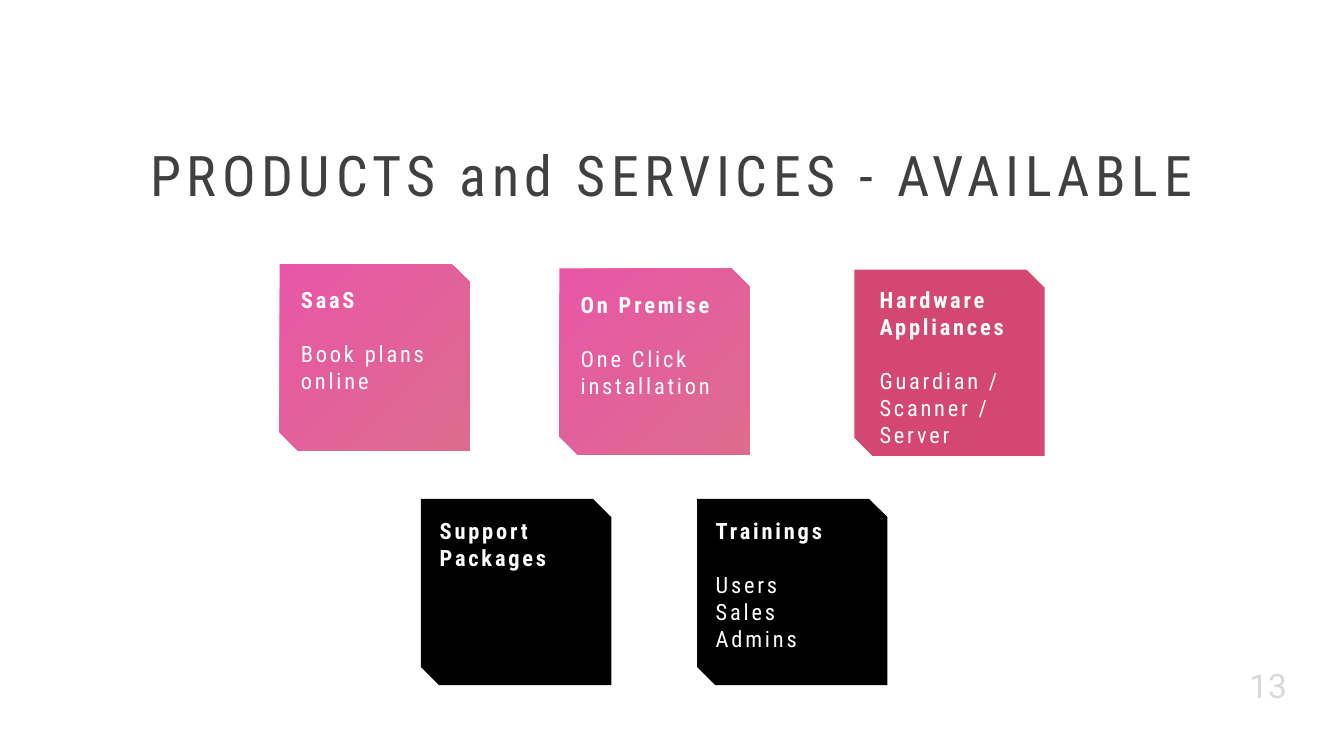
from dataclasses import dataclass
from typing import Optional

from lxml import etree
from pptx import Presentation
from pptx.dml.color import RGBColor
from pptx.enum import text as t
from pptx.oxml import ns
from pptx.util import Pt

WHITE = RGBColor(0xFF, 0xFF, 0xFF)
BLACK = RGBColor(0x00, 0x00, 0x00)
DARK_GREY = RGBColor(0x40, 0x40, 0x40)
LIGHT_GREY = RGBColor(0xD9, 0xD9, 0xD9)
PINK = RGBColor(0xE3, 0x2D, 0x91)
ROSE = RGBColor(0xD5, 0x47, 0x73)

CARD_W, CARD_H, SNIP = 204, 199.7, 19.6
LINE = 29  # height of one line of card text


@dataclass
class Card:
    left: float
    top: float
    inset_x: float
    inset_y: float
    text_w: float
    text_h: float
    heading: str
    lines: tuple[str, ...] = ()
    fill: Optional[RGBColor] = None  # None means the pink gradient


CARDS = [
    Card(299.5, 283, 15.8, 20.2, 183.6, 152.6, "SaaS", ("Book plans online",)),
    Card(599.3, 287.5, 15.8, 20.5, 227.5, 152.6, "On Premise", ("One Click installation",)),
    Card(451, 534.5, 13, 16.3, 203.8, 65.5, "Support Packages", fill=BLACK),
    Card(746.8, 534.5, 13, 16.3, 203.8, 152.6, "Trainings",
         ("Users", "Sales", "Admins"), BLACK),
    Card(915.3, 288.8, 20, 14.3, 203.8, 211, "Hardware Appliances",
         ("Guardian / Scanner / Server",), ROSE),
]


def write(p, text: str, *, size: float, color: RGBColor, font: str = "Roboto Condensed",
          bold: bool = False, spacing: float = 0, align=t.PP_ALIGN.LEFT, before: float = 0) -> None:
    p.alignment = align
    p.space_before = Pt(before)
    r = p.add_run()
    r.text = text
    r.font.name = font
    r.font.size = Pt(size)
    r.font.bold = bold
    r.font.color.rgb = color
    if spacing:
        r._r.get_or_add_rPr().set("spc", str(int(spacing * 100)))


def add_text_frame(s, left: float, top: float, width: float, height: float):
    tf = s.shapes.add_textbox(Pt(left), Pt(top), Pt(width), Pt(height)).text_frame
    tf.word_wrap = True
    return tf


def fill_gradient(sp) -> None:
    """Fill with pink to rose, top left to bottom right, at 80 % opacity."""
    sp.fill.gradient()
    sp.fill.gradient_angle = 315
    for stop, color, position in zip(sp.fill.gradient_stops, (PINK, ROSE), (0, 1)):
        stop.color.rgb = color
        stop.position = position
    for clr in sp._element.spPr.iter(ns.qn("a:srgbClr")):
        etree.SubElement(clr, ns.qn("a:alpha"), val="80000")


def draw_card(s, card: Card) -> None:
    x, y = card.left, card.top
    right, bottom = x + CARD_W, y + CARD_H
    outline = [(right - SNIP, y), (right, y + SNIP), (right, bottom),
               (x + SNIP, bottom), (x, bottom - SNIP)]
    builder = s.shapes.build_freeform(Pt(x), Pt(y))
    builder.add_line_segments([(Pt(a), Pt(b)) for a, b in outline], close=True)
    sp = builder.convert_to_shape()
    sp.shadow.inherit = False
    sp.line.fill.background()
    if card.fill is None:
        fill_gradient(sp)
    else:
        sp.fill.solid()
        sp.fill.fore_color.rgb = card.fill

    tf = add_text_frame(s, x + card.inset_x, y + card.inset_y, card.text_w, card.text_h)
    write(tf.paragraphs[0], card.heading, size=24, color=WHITE, bold=True, spacing=3)
    for i, line in enumerate(card.lines):
        write(tf.add_paragraph(), line, size=24, color=WHITE, spacing=3,
              before=LINE if i == 0 else 0)


def draw_title(s, text: str) -> None:
    title = s.shapes.title
    title.left, title.top, title.width, title.height = Pt(0), Pt(147), Pt(1440), Pt(80)
    tf = title.text_frame
    tf.word_wrap = True
    tf.auto_size = t.MSO_AUTO_SIZE.NONE
    tf.vertical_anchor = t.MSO_ANCHOR.TOP
    write(tf.paragraphs[0], text, size=60, color=DARK_GREY, spacing=6, align=t.PP_ALIGN.CENTER)


def main() -> None:
    prs = Presentation()
    prs.slide_width, prs.slide_height = Pt(1440), Pt(810)
    s = prs.slides.add_slide(prs.slide_layouts.get_by_name("Title Only"))
    draw_title(s, "PRODUCTS and SERVICES - AVAILABLE")
    for card in CARDS:
        draw_card(s, card)
    number = add_text_frame(s, 1222.5, 708.5, 163.5, 51)
    write(number.paragraphs[0], "13", size=36, color=LIGHT_GREY, font="Roboto",
          align=t.PP_ALIGN.RIGHT)
    prs.save("out.pptx")


if __name__ == "__main__":
    main()
